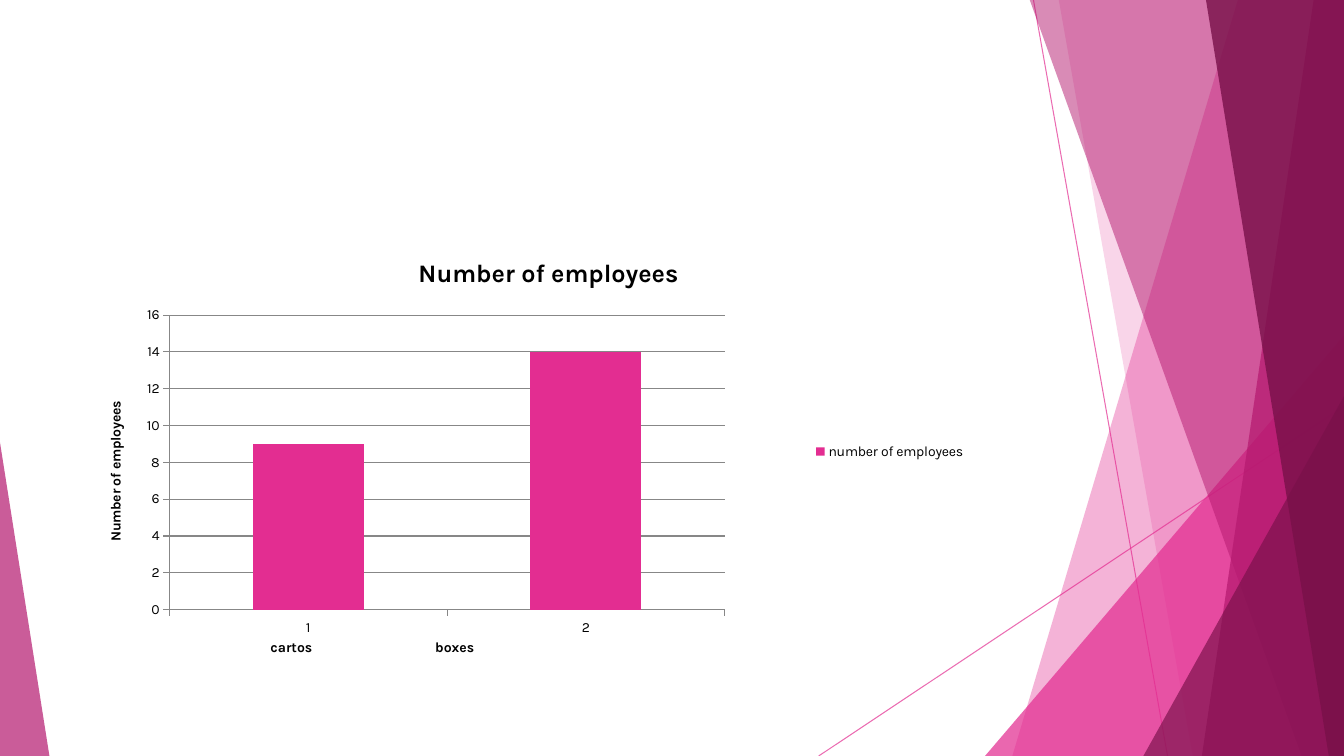
from lxml import etree
from pptx import Presentation
from pptx.chart.data import CategoryChartData
from pptx.dml.color import RGBColor
from pptx.enum.chart import XL_CHART_TYPE as ChartType, XL_LEGEND_POSITION as LegendPosition
from pptx.enum.chart import XL_TICK_MARK as TickMark
from pptx.enum.shapes import MSO_CONNECTOR as Connector, MSO_SHAPE as Shape
from pptx.enum.text import MSO_ANCHOR as Anchor, PP_ALIGN as Align
from pptx.oxml import parse_xml
from pptx.oxml.ns import nsdecls, qn
from pptx.util import Inches, Pt

WIDTH, HEIGHT, TOP = 13.33, 7.5, -0.01
FONT = "Karla"
COLORS = {"pink": "E32D91", "magenta": "B4186E", "plum": "781049",
          "text": "000000", "axis": "878787"}

TITLE = "Number of employees"
SERIES = "number of employees"
CATEGORIES = ["1", "2"]
EMPLOYEES = [9, 14]
AXIS_WORDS = {"cartos": 2.89, "boxes": 4.51}  # word: centre

CHART = (0.74, 2.36, 9.4, 4.24)
PLOT_SHARE = dict(x=0.1, y=0.181, w=0.586, h=0.689)
LEGEND_SHARE = dict(x=0.75, y=0.46, w=0.22, h=0.08)

RAYS = [((10.25, 0), (11.58, HEIGHT)), ((WIDTH, 4.03), (8.12, HEIGHT))]
# Back to front. A band runs from its slanted left edge (top x, bottom x) to the
# right side of the slide; a wedge stands on the bottom (left, top, width, apex share).
FACETS = [
    ("band", (12.28, 10.04), "pink", 36),
    ("band", (10.5, 11.83), "pink", 20),
    ("wedge", (9.77, 3.33, 3.56, 1), "pink", 72),
    ("band", (10.21, 12.91), "magenta", 50),
    ("band", (13.03, 11.92), "magenta", 70),
    ("band", (11.96, 13.18), "plum", 80),
    ("wedge", (11.34, 3.93, 1.99, 1), "plum", 66),
    ("wedge", (0, 4.39, 0.49, 0), "magenta", 70),
]


def rgb(name):
    return RGBColor.from_string(COLORS[name])


def set_alpha(element, percent):
    color = next(element.iter(qn("a:srgbClr")))
    etree.SubElement(color, qn("a:alpha")).set("val", str(percent * 1000))


def write(frame, text, size=10, bold=True, align=Align.CENTER):
    paragraph = frame.paragraphs[0]
    paragraph.alignment = align
    run = paragraph.add_run()
    run.text = text
    run.font.name, run.font.size, run.font.bold = FONT, Pt(size), bold
    run.font.color.rgb = rgb("text")


def add_ray(shapes, start, end):
    ray = shapes.add_connector(Connector.STRAIGHT, *map(Inches, start + end))
    ray.line.color.rgb = rgb("pink")
    ray.line.width = Pt(0.75)
    properties = ray.line._get_or_add_ln().getparent()
    set_alpha(properties, 70)
    etree.SubElement(properties, qn("a:effectLst"))


def add_band(shapes, top_x, bottom_x):
    corners = [(top_x, TOP), (WIDTH, TOP), (WIDTH, HEIGHT), (bottom_x, HEIGHT)]
    corners = [(Inches(x), Inches(y)) for x, y in corners]
    outline = shapes.build_freeform(*corners[0], scale=1.0)
    outline.add_line_segments(corners[1:], close=True)
    return outline.convert_to_shape()


def add_wedge(shapes, left, top, width, apex):
    box = map(Inches, (left, top, width, HEIGHT - top))
    wedge = shapes.add_shape(Shape.ISOSCELES_TRIANGLE, *box)
    wedge.adjustments[0] = apex
    return wedge


def add_facet(shapes, kind, geometry, color, alpha):
    facet = {"band": add_band, "wedge": add_wedge}[kind](shapes, *geometry)
    facet.shadow.inherit = False
    facet.fill.solid()
    facet.fill.fore_color.rgb = rgb(color)
    set_alpha(facet._element.spPr, alpha)
    facet.line.fill.background()


def place(part, shares, inner=False):
    """Give a chart part a fixed place, as shares of the chart."""
    for automatic in part.findall(qn("c:layout")):
        part.remove(automatic)
    rules = '<c:layoutTarget val="inner"/>' if inner else ""
    rules += '<c:xMode val="edge"/><c:yMode val="edge"/>'
    rules += "".join(f'<c:{side} val="{share}"/>' for side, share in shares.items())
    layout = parse_xml(f'<c:layout {nsdecls("c")}><c:manualLayout>{rules}'
                       "</c:manualLayout></c:layout>")
    part.insert(0 if inner else 1, layout)


def add_employee_chart(shapes):
    data = CategoryChartData()
    data.categories = CATEGORIES
    data.add_series(SERIES, EMPLOYEES)
    chart = shapes.add_chart(ChartType.COLUMN_STACKED, *map(Inches, CHART), data).chart
    chart.font.name, chart.font.size = FONT, Pt(10)
    chart.font.color.rgb = rgb("text")
    chart.has_title = True
    write(chart.chart_title.text_frame, TITLE, size=18)
    chart.chart_title.include_in_layout = False

    columns = chart.plots[0]
    columns.gap_width, columns.overlap, columns.vary_by_categories = 150, 100, False
    fill = columns.series[0].format.fill
    fill.solid()
    fill.fore_color.rgb = rgb("pink")

    values = chart.value_axis
    values.minimum_scale, values.maximum_scale, values.major_unit = 0, 16, 2
    values.has_major_gridlines = True
    values.has_title = True
    write(values.axis_title.text_frame, TITLE)
    for axis in (values, chart.category_axis):
        axis.major_tick_mark, axis.minor_tick_mark = TickMark.OUTSIDE, TickMark.NONE
    for part in (values, chart.category_axis, values.major_gridlines):
        part.format.line.color.rgb = rgb("axis")
        part.format.line.width = Pt(0.75)

    chart.has_legend = True
    chart.legend.position = LegendPosition.LEFT
    chart.legend.include_in_layout = False
    place(chart.legend._element, LEGEND_SHARE)
    place(chart._chartSpace.chart.plotArea, PLOT_SHARE, inner=True)


def add_axis_word(shapes, word, center, width=1, height=0.3, middle=6.42):
    box = (center - width / 2, middle - height / 2, width, height)
    frame = shapes.add_textbox(*map(Inches, box)).text_frame
    frame.word_wrap = True
    frame.vertical_anchor = Anchor.MIDDLE
    frame.margin_top = frame.margin_bottom = 0
    write(frame, word)


def main():
    deck = Presentation()
    deck.slide_width, deck.slide_height = Inches(WIDTH), Inches(HEIGHT)
    shapes = deck.slides.add_slide(deck.slide_layouts[6]).shapes
    for start, end in RAYS:
        add_ray(shapes, start, end)
    for facet in FACETS:
        add_facet(shapes, *facet)
    add_employee_chart(shapes)
    for word, center in AXIS_WORDS.items():
        add_axis_word(shapes, word, center)
    deck.save("out.pptx")


if __name__ == "__main__":
    main()
